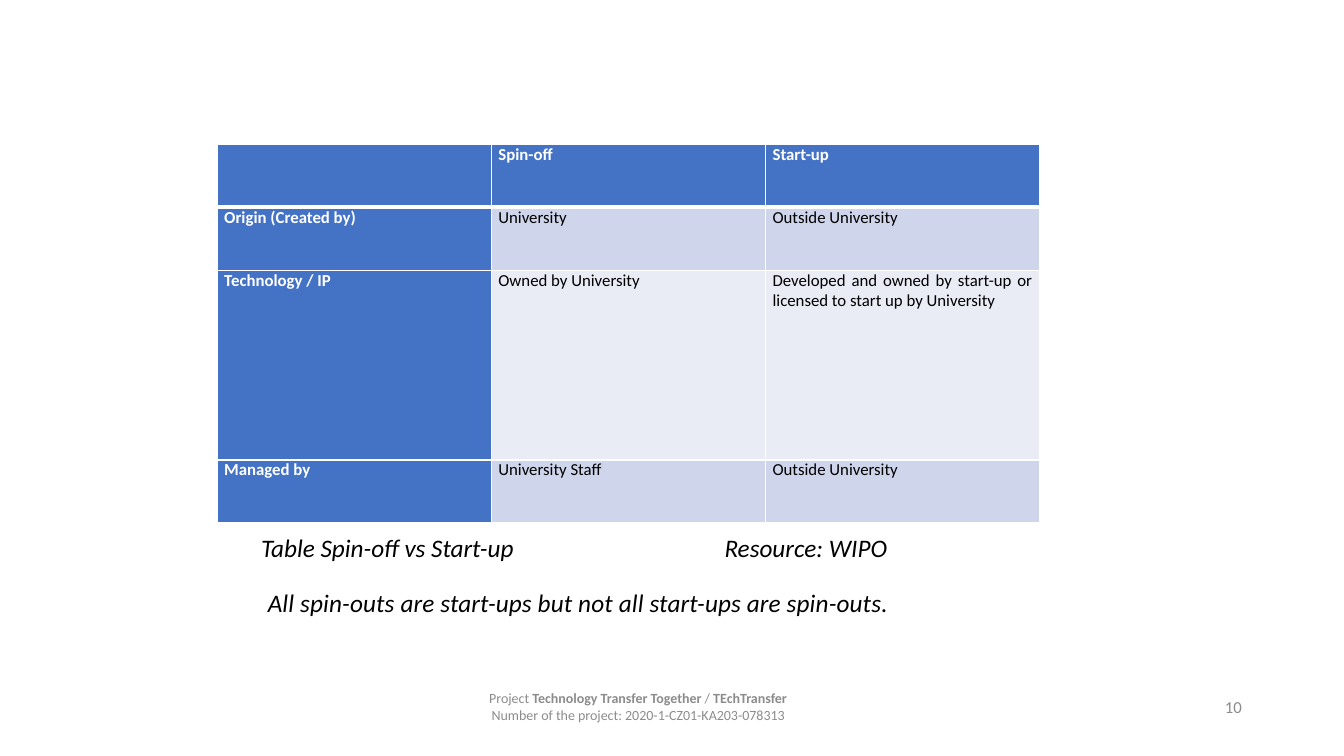
from lxml import etree
from pptx import Presentation
from pptx.dml.color import RGBColor
from pptx.enum.text import MSO_ANCHOR, PP_ALIGN
from pptx.oxml.ns import qn
from pptx.util import Cm, Pt

LEFT, MID, RIGHT, FULL = PP_ALIGN.LEFT, PP_ALIGN.CENTER, PP_ALIGN.RIGHT, PP_ALIGN.JUSTIFY
CENTRE = MSO_ANCHOR.MIDDLE

FONT = "Calibri"
COLORS = {"head": "4472C4", "odd": "CFD5EA", "even": "E9EBF5",
          "white": "FFFFFF", "black": "000000", "grey": "8C8C8C"}

ROWS = [
    ("", "Spin-off", "Start-up"),
    ("Origin (Created by)", "University", "Outside University"),
    ("Technology / IP", "Owned by University",
     "Developed and owned by start-up or licensed to start up by University"),
    ("Managed by", "University Staff", "Outside University"),
]
TALL = 2  # index of the high row
CAPTION = "Table Spin-off vs Start-up\tResource: WIPO"
CLAIM = "All spin-outs are start-ups but not all start-ups are spin-outs."
FOOTER = [
    [("Project ", False), ("Technology Transfer Together", True),
     (" / ", False), ("TEchTransfer", True)],
    [("Number of the project: 2020-1-CZ01-KA203-078313", False)],
]
NUMBER = "10"


def add_run(para, text, size, color, bold=False, italic=False):
    run = para.add_run()
    run.text = text
    font = run.font
    font.name, font.size = FONT, Pt(size)
    font.bold, font.italic = bold, italic
    font.color.rgb = RGBColor.from_string(COLORS[color])
    return run


def add_box(slide, x, y, w, h, wrap=True, anchor=MSO_ANCHOR.TOP):
    frame = slide.shapes.add_textbox(Cm(x), Cm(y), Cm(w), Cm(h)).text_frame
    frame.word_wrap = wrap
    frame.vertical_anchor = anchor
    return frame


def add_tab(para, pos):
    tabs = etree.SubElement(para._p.get_or_add_pPr(), qn("a:tabLst"))
    etree.SubElement(tabs, qn("a:tab"), pos=str(Cm(pos)), algn="l")


def set_border(cell, side, width):
    line = etree.SubElement(cell._tc.get_or_add_tcPr(), qn("a:ln" + side), w=str(Pt(width)))
    fill = etree.SubElement(line, qn("a:solidFill"))
    etree.SubElement(fill, qn("a:srgbClr"), val=COLORS["white"])


def fill_cell(cell, text, row, col):
    head = row == 0 or col == 0
    widths = {"L": 1, "R": 1, "T": 3 if row == 1 else 1, "B": 3 if row == 0 else 1}
    for side, width in widths.items():
        set_border(cell, side, width)
    shade = "head" if head else "odd" if row % 2 else "even"
    cell.fill.solid()
    cell.fill.fore_color.rgb = RGBColor.from_string(COLORS[shade])
    cell.margin_left = cell.margin_right = Cm(0.18)
    cell.margin_top = cell.margin_bottom = 0
    if text:
        para = cell.text_frame.paragraphs[0]
        para.alignment = FULL
        if row != TALL:
            para.space_after = Pt(19.2)
        add_run(para, text, 12, "white" if head else "black", bold=head)


def add_grid(slide, x, y, col_w, row_h, tall_h):
    count, cols = len(ROWS), len(ROWS[0])
    high = row_h * (count - 1) + tall_h
    grid = slide.shapes.add_table(count, cols, Cm(x), Cm(y), Cm(col_w * cols), Cm(high)).table
    for col in grid.columns:
        col.width = Cm(col_w)
    for r, texts in enumerate(ROWS):
        grid.rows[r].height = Cm(tall_h if r == TALL else row_h)
        for c, text in enumerate(texts):
            fill_cell(grid.cell(r, c), text, r, c)


def main():
    deck = Presentation()
    deck.slide_width, deck.slide_height = Cm(33.87), Cm(19.05)
    slide = deck.slides.add_slide(deck.slide_layouts[6])

    para = add_box(slide, 29.29, 17.3, 2.26, 1.02, anchor=CENTRE).paragraphs[0]
    para.alignment = RIGHT
    add_run(para, NUMBER, 12, "grey")

    foot = add_box(slide, 11.23, 17.3, 9.7, 1, anchor=CENTRE)
    for i, parts in enumerate(FOOTER):
        para = foot.add_paragraph() if i else foot.paragraphs[0]
        para.alignment = MID
        for text, bold in parts:
            add_run(para, text, 10, "grey", bold=bold)

    add_grid(slide, 5.47, 3.63, 6.91, 1.59, 4.78)

    para = add_box(slide, 6.5, 14.61, 16.32, 1.09, wrap=False).paragraphs[0]
    para.alignment = LEFT
    para.line_spacing, para.space_after = 1.1, Pt(6)
    run = add_run(para, CLAIM, 18, "black", italic=True)
    run._r.get_or_add_rPr().set("spc", "10")

    para = add_box(slide, 6.33, 13.28, 16.81, 1.02).paragraphs[0]
    add_tab(para, 11.68)
    add_run(para, CAPTION, 18, "black", italic=True)

    deck.save("out.pptx")


if __name__ == "__main__":
    main()
